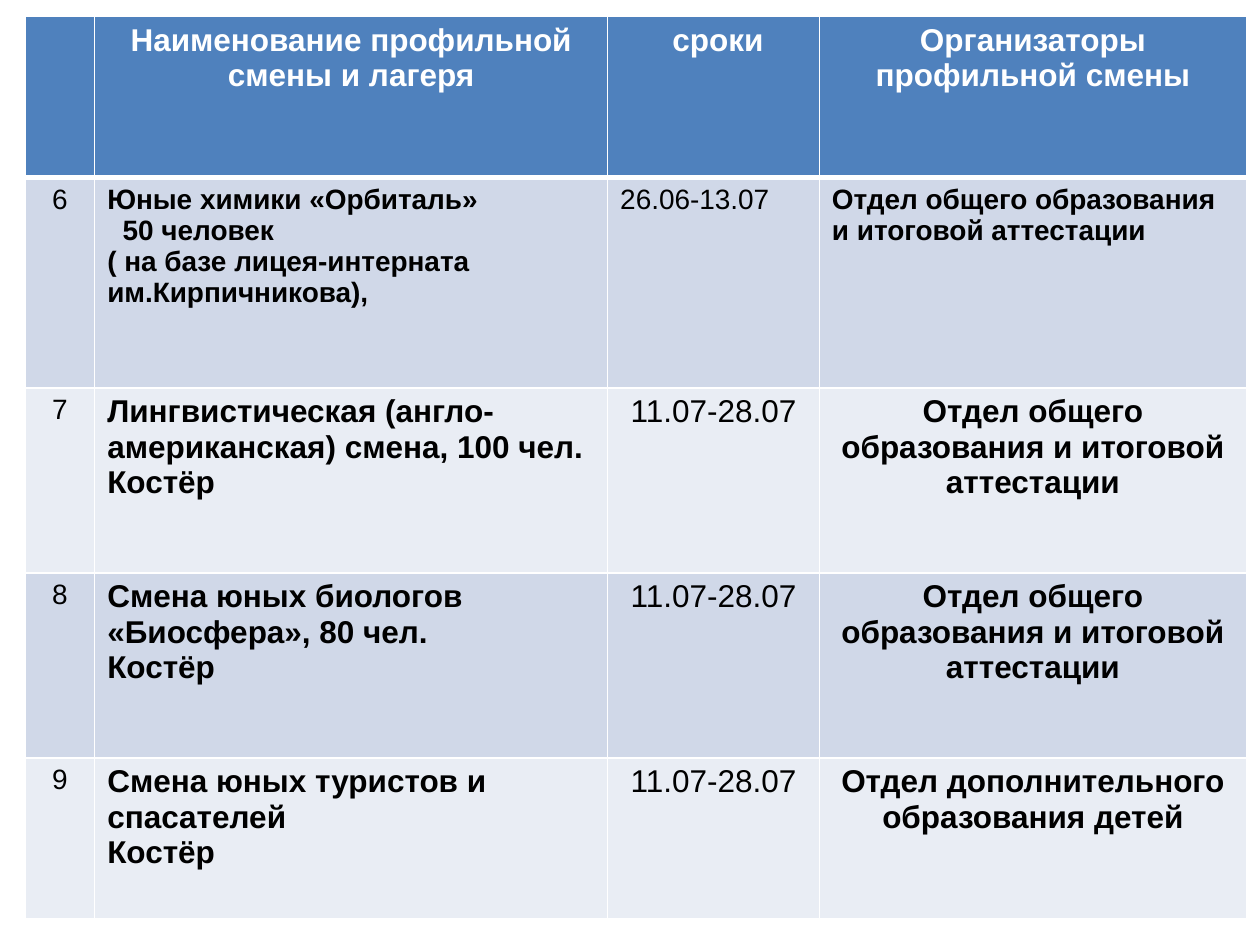
from lxml import etree
from pptx import Presentation
from pptx.dml.color import RGBColor
from pptx.enum.text import PP_ALIGN
from pptx.oxml.ns import qn
from pptx.util import Cm, Pt

LEFT, CENTER = PP_ALIGN.LEFT, PP_ALIGN.CENTER
FONT = "Arial"
COLORS = {
    "header": "4F81BD",
    "odd": "D0D8E8",
    "even": "E9EDF4",
    "border": "FFFFFF",
    "header_text": "FFFFFF",
    "text": "000000",
}

GENERAL = "Отдел общего образования и итоговой аттестации"
CAMP = "Костёр"
DATES = "11.07-28.07"
INDENTED = "50 человек"
ROWS = [
    [[], ["Наименование профильной смены и лагеря"], [" сроки"],
     ["Организаторы", "профильной смены"]],
    [["6"],
     ["Юные химики «Орбиталь»", INDENTED,
      "( на базе лицея-интерната им.Кирпичникова),"],
     ["26.06-13.07"], [GENERAL]],
    [["7"], ["Лингвистическая (англо-американская) смена, 100 чел.", CAMP],
     [DATES], [GENERAL]],
    [["8"], ["Смена юных биологов «Биосфера», 80 чел.", CAMP],
     [DATES], [GENERAL]],
    [["9"], ["Смена юных туристов и спасателей", CAMP],
     [DATES], ["Отдел дополнительного образования детей"]],
]
COLUMN_WIDTHS = [1.4, 10.34, 4.27, 8.61]
ROW_HEIGHTS = [3.25, 4.24, 3.73, 3.73, 3.25]
LEFT_EDGE, TOP_EDGE = 0.51, 0.33


def set_borders(cell, widths):
    properties = cell._tc.get_or_add_tcPr()
    for position, (side, width) in enumerate(widths.items()):
        line = etree.Element(qn(f"a:ln{side}"), w=str(Pt(width)))
        fill = etree.SubElement(line, qn("a:solidFill"))
        etree.SubElement(fill, qn("a:srgbClr"), val=COLORS["border"])
        properties.insert(position, line)


def write_cell(cell, lines, size, bold, color, alignment):
    frame = cell.text_frame
    for index, line in enumerate(lines):
        para = frame.add_paragraph() if index else frame.paragraphs[0]
        para.alignment = alignment
        if line == INDENTED:
            para._p.get_or_add_pPr().set("marL", str(Cm(0.31)))
        span = para.add_run()
        span.text = line
        span.font.name = FONT
        span.font.size = Pt(size)
        span.font.bold = bold
        span.font.color.rgb = RGBColor.from_string(COLORS[color])


def fill_table(table):
    for column, width in zip(table.columns, COLUMN_WIDTHS):
        column.width = Cm(width)
    for row, height in zip(table.rows, ROW_HEIGHTS):
        row.height = Cm(height)
    for r, row in enumerate(ROWS):
        header = r == 0
        band = "header" if header else "odd" if r % 2 else "even"
        for c, lines in enumerate(row):
            cell = table.cell(r, c)
            cell.fill.solid()
            cell.fill.fore_color.rgb = RGBColor.from_string(COLORS[band])
            set_borders(cell, {"L": 1, "R": 1, "T": 3 if r == 1 else 1,
                               "B": 3 if header else 1})
            size = 16 if r == 1 or (c == 0 and not header) else 18
            bold = header or c in (1, 3)
            centered = header or c == 0 or (r > 1 and c != 1)
            write_cell(cell, lines, size, bold,
                       "header_text" if header else "text",
                       CENTER if centered else LEFT)


def main():
    deck = Presentation()
    deck.slide_width, deck.slide_height = Cm(25.4), Cm(19.05)
    page = deck.slides.add_slide(deck.slide_layouts[6])
    frame = page.shapes.add_table(
        len(ROWS), len(COLUMN_WIDTHS), Cm(LEFT_EDGE), Cm(TOP_EDGE),
        Cm(sum(COLUMN_WIDTHS)), Cm(sum(ROW_HEIGHTS)))
    fill_table(frame.table)
    deck.save("out.pptx")


if __name__ == "__main__":
    main()
